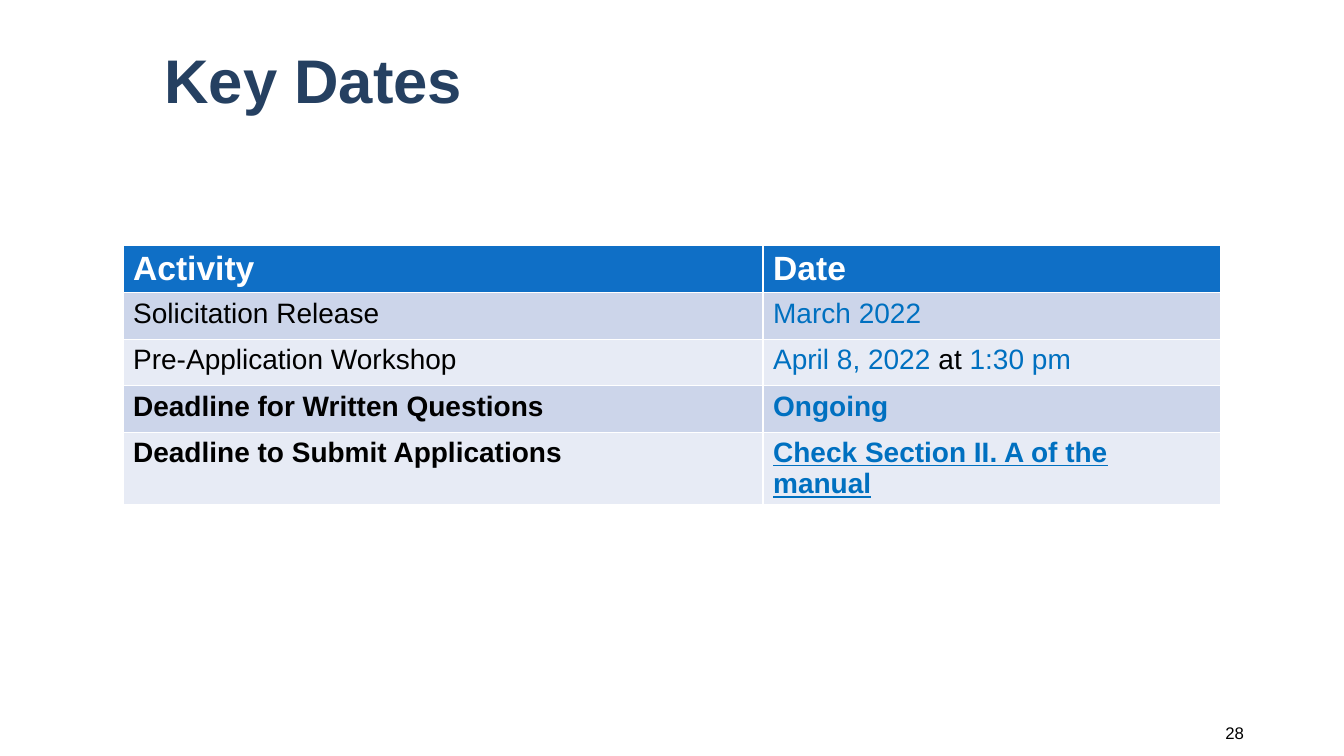
from dataclasses import dataclass

import pptx
import pptx.dml.color
import pptx.enum.text
import pptx.table
import pptx.text.text
import pptx.util
from pptx.dml.color import RGBColor
from pptx.util import Cm

NAVY = RGBColor(0x25, 0x40, 0x61)
HEAD = RGBColor(0x0F, 0x6F, 0xC6)
BLUE = RGBColor(0x00, 0x70, 0xC0)
BLACK = RGBColor(0x00, 0x00, 0x00)
WHITE = RGBColor(0xFF, 0xFF, 0xFF)
BANDS = (RGBColor(0xCC, 0xD5, 0xEA), RGBColor(0xE7, 0xEB, 0xF5))

Part = tuple[str, RGBColor]


@dataclass
class Row:
    task: str
    date: list[Part]
    bold: bool = False
    under: bool = False


ROWS = [
    Row("Solicitation Release", [("March 2022", BLUE)]),
    Row("Pre-Application Workshop",
        [("April 8, 2022 ", BLUE), ("at ", BLACK), ("1:30 pm", BLUE)]),
    Row("Deadline for Written Questions", [("Ongoing", BLUE)], bold=True),
    Row("Deadline to Submit Applications",
        [("Check Section II. A of the manual", BLUE)], bold=True, under=True),
]


def write(para: pptx.text.text._Paragraph, parts: list[Part], size: int,
          bold: bool = False, under: bool = False) -> None:
    """Fill a paragraph with coloured runs in one shared font."""
    font = para.font
    font.name = "Arial"
    font.size = pptx.util.Pt(size)
    font.bold = bold
    font.underline = under
    for text, color in parts:
        run = para.add_run()
        run.text = text
        run.font.color.rgb = color


def paint(cell: pptx.table._Cell, fill: RGBColor, parts: list[Part], size: int,
          bold: bool, under: bool = False) -> None:
    cell.fill.solid()
    cell.fill.fore_color.rgb = fill
    write(cell.text_frame.paragraphs[0], parts, size, bold, under)


def main() -> None:
    deck = pptx.Presentation()
    deck.slide_width, deck.slide_height = Cm(33.87), Cm(19.05)
    slide = deck.slides.add_slide(deck.slide_layouts[5])

    # Title
    title = slide.shapes.title
    title.left, title.top = Cm(3.89), Cm(0.66)
    title.width, title.height = Cm(27.66), Cm(2.9)
    frame = title.text_frame
    frame.vertical_anchor = pptx.enum.text.MSO_ANCHOR.MIDDLE
    head = frame.paragraphs[0]
    head.alignment = pptx.enum.text.PP_ALIGN.LEFT
    head.line_spacing = 0.9
    write(head, [("Key Dates", NAVY)], 44, bold=True)

    # Table of dates
    high = Cm(1.17)
    count = len(ROWS) + 1
    grid = slide.shapes.add_table(
        count, 2, Cm(3.1), Cm(6.18), Cm(27.66), high * count).table
    for col, width in zip(grid.columns, (16.13, 11.53)):
        col.width = Cm(width)
    for col, text in enumerate(("Activity", "Date")):
        paint(grid.cell(0, col), HEAD, [(text, WHITE)], 24, True)
    for num, row in enumerate(ROWS):
        fill = BANDS[num % 2]
        paint(grid.cell(num + 1, 0), fill, [(row.task, BLACK)], 20, row.bold)
        paint(grid.cell(num + 1, 1), fill, row.date, 20, row.bold, row.under)

    # Page number
    page = slide.shapes.add_textbox(Cm(26.6), Cm(17.96), Cm(5), Cm(1.02))
    frame = page.text_frame
    frame.word_wrap = True
    frame.vertical_anchor = pptx.enum.text.MSO_ANCHOR.MIDDLE
    frame.paragraphs[0].alignment = pptx.enum.text.PP_ALIGN.RIGHT
    write(frame.paragraphs[0], [("28", BLACK)], 12)

    deck.save("out.pptx")


if __name__ == "__main__":
    main()
